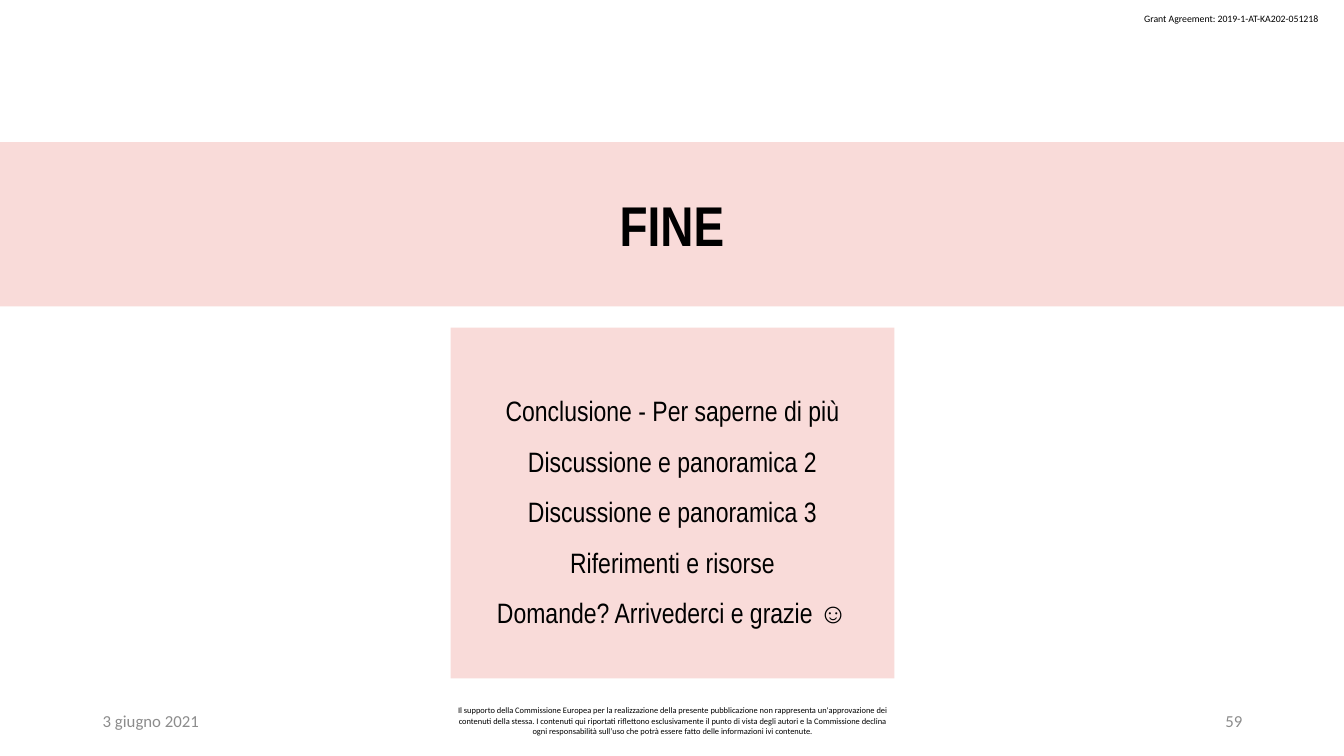
from dataclasses import dataclass

from pptx import Presentation
from pptx.dml.color import RGBColor
from pptx.enum.shapes import MSO_SHAPE
from pptx.enum.text import MSO_ANCHOR as Anchor, PP_ALIGN as Align
from pptx.util import Inches, Pt


@dataclass(frozen=True)
class Theme:
    ink: str = "000000"
    muted: str = "8C8C8C"
    panel: str = "F9DBD9"
    body_font: str = "Calibri"
    display_font: str = "Arial Narrow"
    title_size: int = 40
    topic_size: int = 20
    footer_size: int = 12
    grant_size: int = 7
    disclaimer_size: int = 6


@dataclass(frozen=True)
class Area:
    left: float
    top: float
    width: float
    height: float

    def lengths(self) -> list:
        return [Inches(v) for v in (self.left, self.top, self.width, self.height)]


@dataclass(frozen=True)
class Footer:
    text: str
    left: float
    width: float
    size: int
    color: str
    align: Align


THEME = Theme()
SLIDE_WIDTH, SLIDE_HEIGHT = 13.33, 7.5
FOOTER_TOP, FOOTER_HEIGHT = 6.95, 0.4

DISCLAIMER = (
    "Il supporto della Commissione Europea per la realizzazione della presente "
    "pubblicazione non rappresenta un'approvazione dei contenuti della stessa. "
    "I contenuti qui riportati riflettono esclusivamente il punto di vista degli "
    "autori e la Commissione declina ogni responsabilità sull’uso che potrà essere "
    "fatto delle informazioni ivi contenute."
)
FOOTERS = [
    Footer("3 giugno 2021", 0.92, 3, THEME.footer_size, THEME.muted, Align.LEFT),
    Footer(DISCLAIMER, 4.42, 4.5, THEME.disclaimer_size, THEME.ink, Align.CENTER),
    Footer("59", 9.42, 3, THEME.footer_size, THEME.muted, Align.RIGHT),
]
TOPICS = [
    "Conclusione - Per saperne di più",
    "Discussione e panoramica 2",
    "Discussione e panoramica 3",
    "Riferimenti e risorse",
    "Domande? Arrivederci e grazie ☺",
]


def write(frame, lines: list[str], *, size: int, font: str = THEME.body_font,
          color: str = THEME.ink, bold: bool = False, align: Align = Align.LEFT,
          anchor: Anchor = Anchor.MIDDLE, spacing: float = 1.0,
          wrap: bool = True) -> None:
    frame.word_wrap = wrap
    frame.vertical_anchor = anchor
    for index, line in enumerate(lines):
        paragraph = frame.paragraphs[0] if index == 0 else frame.add_paragraph()
        paragraph.alignment = align
        paragraph.line_spacing = spacing
        run = paragraph.add_run()
        run.text = line
        run.font.name = font
        run.font.size = Pt(size)
        run.font.bold = bold
        run.font.color.rgb = RGBColor.from_string(color)


def add_panel(slide, area: Area, lines: list[str], **text_format) -> None:
    panel = slide.shapes.add_shape(MSO_SHAPE.RECTANGLE, *area.lengths())
    panel.shadow.inherit = False
    panel.fill.solid()
    panel.fill.fore_color.rgb = RGBColor.from_string(THEME.panel)
    panel.line.fill.background()
    frame = panel.text_frame
    frame.margin_left = frame.margin_right = Inches(0.13)
    frame.margin_top = frame.margin_bottom = Inches(0.07)
    write(frame, lines, font=THEME.display_font, align=Align.CENTER, **text_format)


def add_label(slide, area: Area, text: str, **text_format) -> None:
    label = slide.shapes.add_textbox(*area.lengths())
    write(label.text_frame, [text], **text_format)


def main() -> None:
    presentation = Presentation()
    presentation.slide_width = Inches(SLIDE_WIDTH)
    presentation.slide_height = Inches(SLIDE_HEIGHT)
    slide = presentation.slides.add_slide(presentation.slide_layouts[6])

    add_label(slide, Area(11.25, 0.08, 1.97, 0.22),
              "Grant Agreement: 2019-1-AT-KA202-051218",
              size=THEME.grant_size, anchor=Anchor.TOP, wrap=False)
    for footer in FOOTERS:
        add_label(slide, Area(footer.left, FOOTER_TOP, footer.width, FOOTER_HEIGHT),
                  footer.text, size=footer.size, color=footer.color,
                  align=footer.align)
    add_panel(slide, Area(0, 1.41, SLIDE_WIDTH, 1.63), ["FINE"],
              size=THEME.title_size, bold=True)
    add_panel(slide, Area(4.47, 3.25, 4.4, 3.48), TOPICS,
              size=THEME.topic_size, spacing=1.5)

    presentation.save("out.pptx")


if __name__ == "__main__":
    main()
